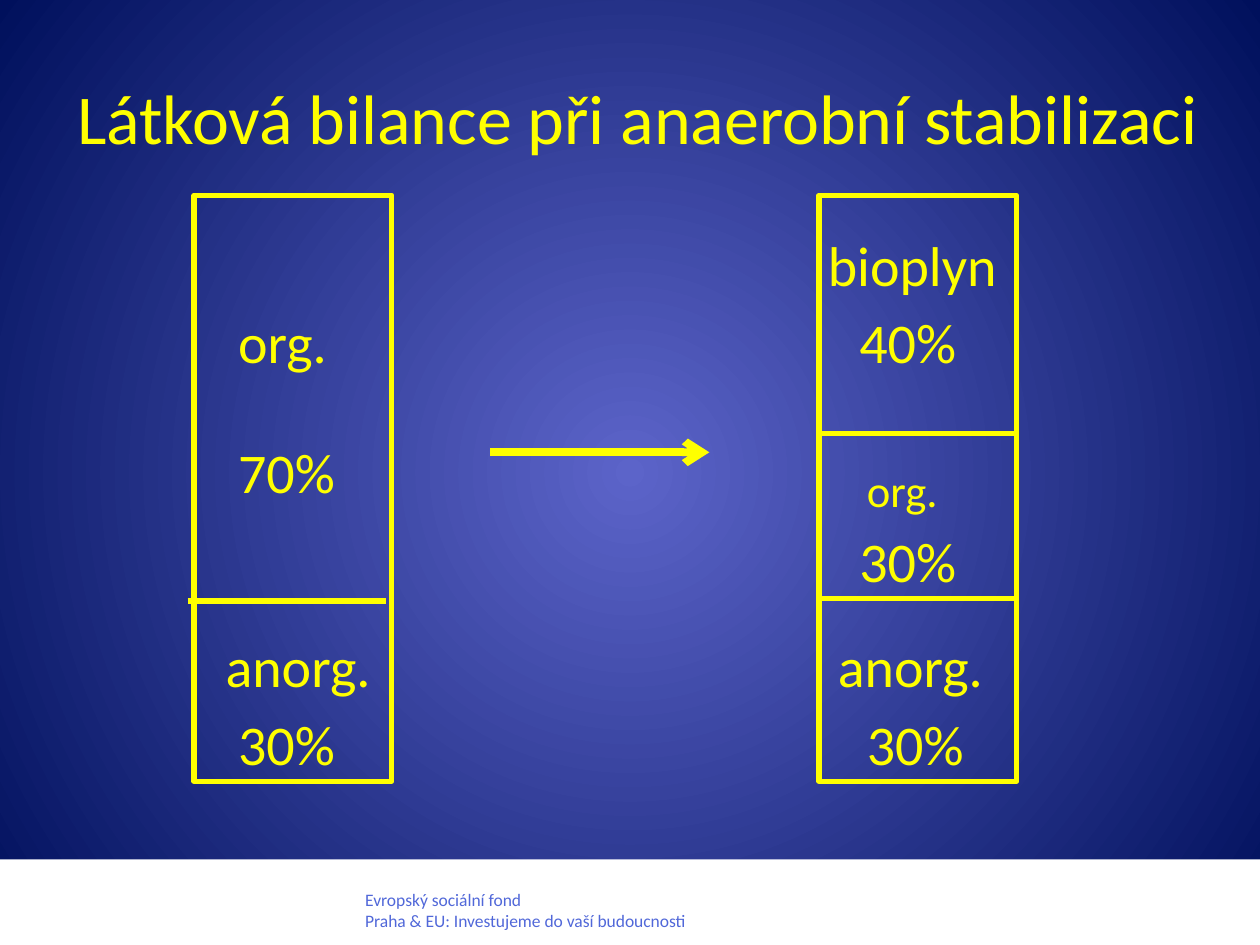
from lxml import etree
from pptx import Presentation
from pptx.dml.color import RGBColor
from pptx.enum.shapes import MSO_CONNECTOR, MSO_SHAPE
from pptx.enum.text import MSO_ANCHOR, PP_ALIGN
from pptx.oxml.ns import qn
from pptx.util import Inches, Pt

COLORS = {"accent": "FFFF00", "center": "5C64C9", "edge": "00105C",
          "band": "FFFFFF", "footer": "5168D9"}

TITLE = "Látková bilance při anaerobní stabilizaci"
FOOTER = "Evropský sociální fond\nPraha & EU: Investujeme do vaší budoucnosti"

COLUMN_TOP, COLUMN_WIDTH, COLUMN_HEIGHT = 1.55, 1.57, 4.65
COLUMNS = [
    {"left": 1.54, "dividers": [(1.49, 4.77)],
     "labels": [("org.", 1.89, 2.44, 32), ("70%", 1.89, 3.47, 32),
                ("anorg.", 1.79, 5.01, 32), ("30%", 1.89, 5.63, 32)]},
    {"left": 6.5, "dividers": [(6.5, 3.44), (6.5, 4.75)],
     "labels": [("bioplyn", 6.57, 1.83, 32), ("40%", 6.82, 2.44, 32),
                ("org.", 6.88, 3.67, 25.5), ("30%", 6.82, 4.18, 32),
                ("anorg.", 6.65, 5.01, 32), ("30%", 6.88, 5.63, 32)]},
]
ARROW = (3.89, 5.63, 3.59)


def color(name):
    return RGBColor.from_string(COLORS[name])


def paint_background(slide):
    fill = slide.background.fill
    fill.gradient()
    for stop, name in zip(fill.gradient_stops, ("center", "edge")):
        stop.color.rgb = color(name)
    gradient = next(slide.background._cSld.iter(qn("a:gradFill")))
    linear = gradient.find(qn("a:lin"))
    circle = etree.Element(qn("a:path"), path="circle")
    etree.SubElement(circle, qn("a:fillToRect"),
                     {side: "50000" for side in "ltrb"})
    gradient.replace(linear, circle)


def add_text(slide, text, box, size, name="accent", inset=0, **layout):
    frame = slide.shapes.add_textbox(*map(Inches, box)).text_frame
    margins = {f"margin_{side}": Inches(inset)
               for side in ("left", "top", "right", "bottom")}
    for key, value in {"word_wrap": True, **margins, **layout}.items():
        setattr(frame, key, value)
    paragraph = frame.paragraphs[0]
    paragraph.text = text
    for key, value in {"size": Pt(size), "name": "Calibri"}.items():
        setattr(paragraph.font, key, value)
    paragraph.font.color.rgb = color(name)
    return paragraph


def add_rectangle(slide, box):
    rectangle = slide.shapes.add_shape(MSO_SHAPE.RECTANGLE, *map(Inches, box))
    rectangle.shadow.inherit = False
    return rectangle


def add_line(slide, start, end, y, width):
    line = slide.shapes.add_connector(
        MSO_CONNECTOR.STRAIGHT, *map(Inches, (start, y, end, y)))
    line.line.color.rgb = color("accent")
    line.line.width = Pt(width)
    etree.SubElement(line._element.spPr, qn("a:effectLst"))
    return line


def main():
    prs = Presentation()
    prs.slide_width, prs.slide_height = Inches(10), Inches(7.5)
    slide = prs.slides.add_slide(prs.slide_layouts[6])
    paint_background(slide)

    band = add_rectangle(slide, (0, 6.82, 10, 0.68))
    band.fill.solid()
    band.fill.fore_color.rgb = color("band")
    band.line.fill.background()
    add_text(slide, FOOTER, (2.8, 7.01, 3.78, 0.44), 10, "footer",
             inset=0.05, margin_left=Inches(0.1))
    title = add_text(slide, TITLE, (0.12, 0.3, 9.88, 1.25), 40,
                     inset=0.05, vertical_anchor=MSO_ANCHOR.MIDDLE)
    title.alignment = PP_ALIGN.CENTER

    for column in COLUMNS:
        for text, left, top, size in column["labels"]:
            add_text(slide, text, (left, top, 1.4, 0.54), size)
        outline = add_rectangle(
            slide, (column["left"], COLUMN_TOP, COLUMN_WIDTH, COLUMN_HEIGHT))
        outline.fill.background()
        outline.line.color.rgb = color("accent")
        outline.line.width = Pt(3)
        for left, y in column["dividers"]:
            add_line(slide, left, left + COLUMN_WIDTH, y, 3)

    arrow = add_line(slide, *ARROW, 4.5)
    etree.SubElement(arrow.line._get_or_add_ln(), qn("a:tailEnd"), type="arrow")
    prs.save("out.pptx")


if __name__ == "__main__":
    main()
